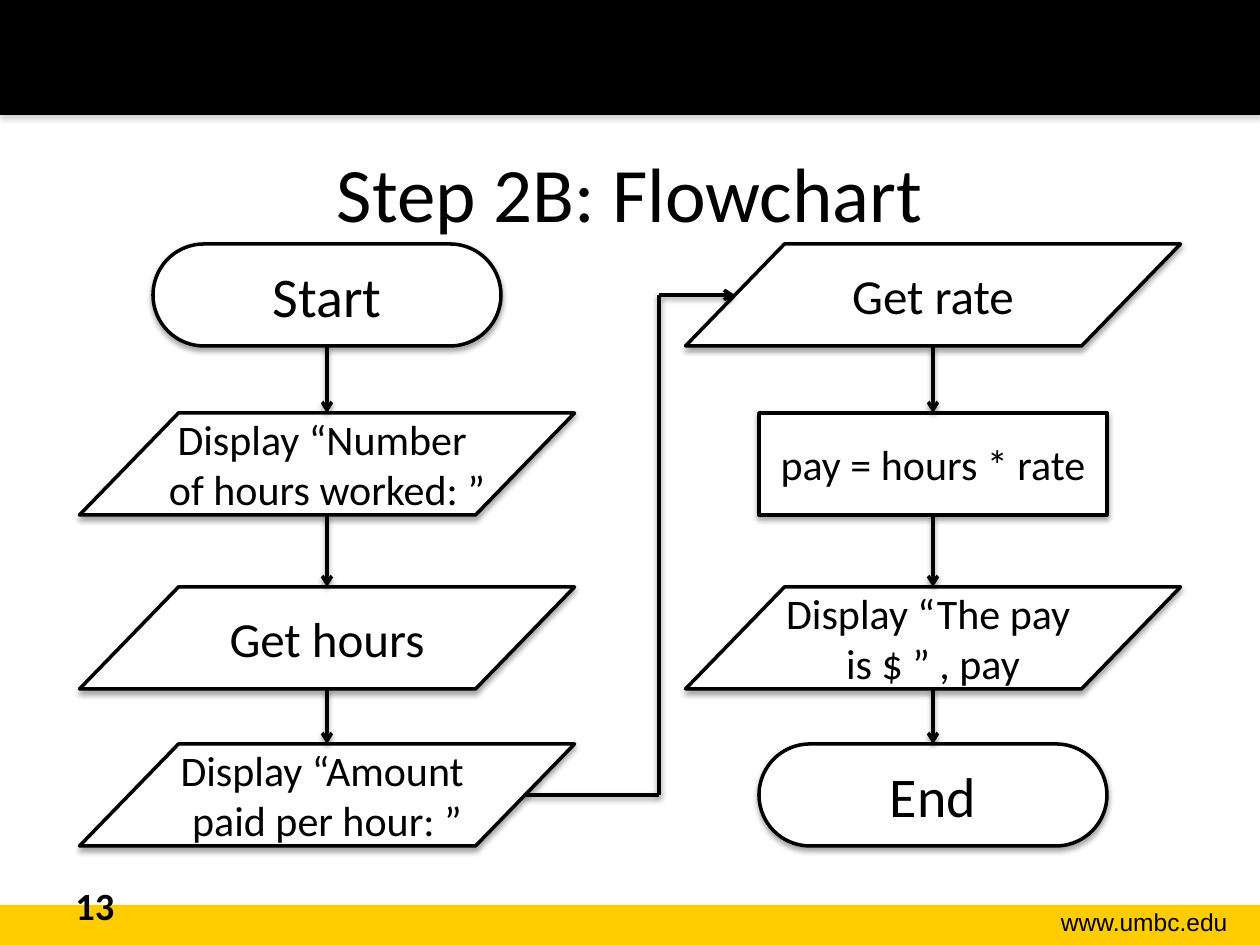
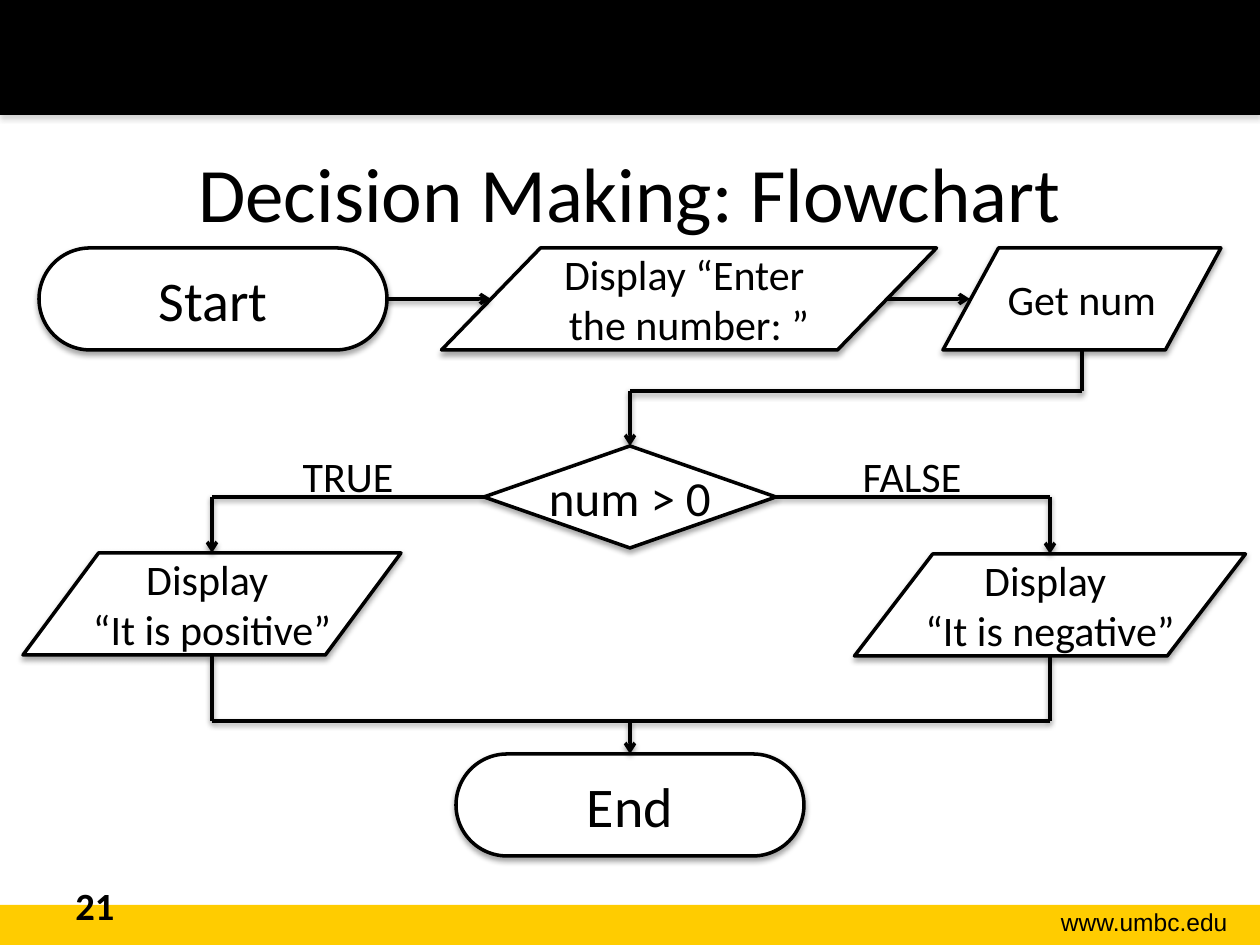
from typing import Any, NamedTuple

from lxml import etree
from pptx import Presentation
from pptx import util as u
from pptx.dml.color import RGBColor
from pptx.enum import shapes, text
from pptx.oxml import ns

BLACK = RGBColor(0x00, 0x00, 0x00)
GREY = RGBColor(0x80, 0x80, 0x80)
WHITE = RGBColor(0xFF, 0xFF, 0xFF)
GOLD = RGBColor(0xFF, 0xCC, 0x00)

PX_PER_INCH = 126
PAGE_WIDTH, PAGE_HEIGHT = 1260, 945
STEP_HEIGHT = 102
TERMINAL_WIDTH = 348
DATA_WIDTH = 495
LINE_WIDTH = u.Pt(2)

TERMINAL = shapes.MSO_SHAPE.ROUNDED_RECTANGLE
PROCESS = shapes.MSO_SHAPE.RECTANGLE
DATA = shapes.MSO_SHAPE.FLOWCHART_DATA
DECISION = shapes.MSO_SHAPE.FLOWCHART_DECISION

TOP, LEFT, BOTTOM, RIGHT = range(4)
ALIGN = text.PP_ALIGN


class Point(NamedTuple):
    """A place in px, with the shape and side to join when there is one."""
    x: int
    y: int
    shape: Any = None
    side: int = 0


class Step(NamedTuple):
    shape: Any
    kind: Any
    centre: int
    top: int
    width: int

    def port(self, side):
        """Middle of a side; the slanted sides of a data step lie further in."""
        middle = self.top + STEP_HEIGHT // 2
        inset = self.width // 10 if self.kind == DATA else 0
        reach = self.width // 2 - inset
        x, y = {
            TOP: (self.centre, self.top),
            LEFT: (self.centre - reach, middle),
            BOTTOM: (self.centre, self.top + STEP_HEIGHT),
            RIGHT: (self.centre + reach, middle),
        }[side]
        return Point(x, y, None if self.kind == DATA else self.shape, side)


def px(*lengths):
    return [u.Emu(round(length * u.Inches(1) / PX_PER_INCH)) for length in lengths]


def add_shadow(shape, color=BLACK, opacity=35, distance=23000):
    properties = shape.element.spPr
    effects = properties.find(ns.qn("a:effectLst"))
    if effects is None:
        effects = etree.SubElement(properties, ns.qn("a:effectLst"))
    shadow = etree.SubElement(
        effects, ns.qn("a:outerShdw"), blurRad="40000", dist=str(distance),
        dir="5400000", rotWithShape="0")
    tint = etree.SubElement(shadow, ns.qn("a:srgbClr"), val=str(color))
    etree.SubElement(tint, ns.qn("a:alpha"), val=str(opacity * 1000))


def write(shape, words, size, align=ALIGN.CENTER, name="Calibri", bold=False):
    para = shape.text_frame.paragraphs[0]
    para.text = words
    para.alignment = align
    formats = {"size": u.Pt(size), "name": name, "bold": bold}
    for span in para.runs:
        for key, value in formats.items():
            setattr(span.font, key, value)
        span.font.color.rgb = BLACK


def add_text(page, box, words, size, **formats):
    label = page.shapes.add_textbox(*px(*box))
    label.text_frame.word_wrap = True
    write(label, words, size, **formats)
    return label


def add_band(page, box, color):
    band = page.shapes.add_shape(PROCESS, *px(*box))
    band.shadow.inherit = False
    band.fill.solid()
    band.fill.fore_color.rgb = color
    band.line.fill.background()
    return band


def furnish_layout(layout, page):
    """Draw the bands and address on a page, then move them to its layout."""
    footer = add_band(page, (0, 905, PAGE_WIDTH, 40), GOLD)
    header = add_band(page, (0, 0, PAGE_WIDTH, 115), BLACK)
    add_shadow(header, GREY)
    address = add_text(page, (989, 901, 251, 43), "www.umbc.edu", 14,
                       align=ALIGN.RIGHT, name="Arial")
    for position, part in enumerate((footer, header, address)):
        part.element.nvSpPr.cNvPr.set("id", str(100 + position))
        layout.shapes.element.insert(2 + position, part.element)


def add_page(deck, layout, heading, number):
    page = deck.slides.add_slide(layout)
    title = page.shapes.title
    title.left, title.top, title.width, title.height = px(63, 113, 1134, 158)
    title.text_frame.vertical_anchor = text.MSO_ANCHOR.MIDDLE
    write(title, heading, 44)
    add_text(page, (63, 876, 294, 50), number, 22, align=ALIGN.LEFT, bold=True)
    return page


def add_step(page, kind, centre, top, width, words, size):
    box = px(centre - width / 2, top, width, STEP_HEIGHT)
    shape = page.shapes.add_shape(kind, *box)
    if kind == TERMINAL:
        shape.adjustments[0] = 0.5
    shape.shadow.inherit = False
    add_shadow(shape)
    shape.fill.solid()
    shape.fill.fore_color.rgb = WHITE
    shape.line.color.rgb = BLACK
    shape.line.width = LINE_WIDTH
    shape.text_frame.word_wrap = kind in (TERMINAL, PROCESS)
    shape.text_frame.vertical_anchor = text.MSO_ANCHOR.MIDDLE
    write(shape, words, size)
    return Step(shape, kind, centre, top, width)


def add_route(page, *points, arrow=True):
    """Join the points by straight lines, with an arrowhead on the last."""
    for start, finish in zip(points, points[1:]):
        line = page.shapes.add_connector(
            shapes.MSO_CONNECTOR.STRAIGHT, *px(*start[:2], *finish[:2]))
        if start.shape is not None:
            line.begin_connect(start.shape, start.side)
        if finish.shape is not None:
            line.end_connect(finish.shape, finish.side)
        line.line.color.rgb = BLACK
        line.line.width = LINE_WIDTH
        if arrow and finish is points[-1]:
            etree.SubElement(line.line._get_or_add_ln(), ns.qn("a:tailEnd"), type="arrow")
        add_shadow(line, opacity=38, distance=20000)


def add_column(page, centre, steps):
    """Stack steps on the four rows, each with an arrow to the next."""
    column = [add_step(page, kind, centre, top, width, words, size)
              for top, (kind, width, words, size) in zip((244, 413, 587, 744), steps)]
    for upper, lower in zip(column, column[1:]):
        add_route(page, upper.port(BOTTOM), lower.port(TOP))
    return column


def draw_pay_flow(page):
    asking = add_column(page, 327, [
        (TERMINAL, TERMINAL_WIDTH, "Start", 32),
        (DATA, DATA_WIDTH, "Display “Number \nof hours worked: ”", 24),
        (DATA, DATA_WIDTH, "Get hours", 28),
        (DATA, DATA_WIDTH, "Display “Amount \npaid per hour: ”", 24),
    ])
    paying = add_column(page, 933, [
        (DATA, DATA_WIDTH, "Get rate", 28),
        (PROCESS, TERMINAL_WIDTH, "pay = hours * rate", 24),
        (DATA, DATA_WIDTH, "Display “The pay \nis $ ” , pay", 24),
        (TERMINAL, TERMINAL_WIDTH, "End", 32),
    ])
    leave, enter = asking[-1].port(RIGHT), paying[0].port(LEFT)
    add_route(page, leave, Point(659, leave.y), Point(659, enter.y), enter)


def draw_decision_flow(page):
    middle, bend_y, merge_y = PAGE_WIDTH // 2, 391, 721
    start = add_step(page, TERMINAL, 213, 248, TERMINAL_WIDTH, "Start", 32)
    prompt = add_step(page, DATA, 689, 248, DATA_WIDTH,
                      "Display “Enter \nthe number: ”", 24)
    get_number = add_step(page, DATA, 1082, 248, 278, "Get num", 24)
    test = add_step(page, DECISION, middle, 446, 292, "num > 0", 28)
    positive = add_step(page, DATA, 212, 553, 378, "Display \n“It is positive”", 24)
    negative = add_step(page, DATA, 1050, 554, 391, "Display \n“It is negative”", 24)
    end = add_step(page, TERMINAL, middle, 754, TERMINAL_WIDTH, "End", 32)

    add_route(page, start.port(RIGHT), prompt.port(LEFT))
    add_route(page, prompt.port(RIGHT), get_number.port(LEFT))
    add_route(page, get_number.port(BOTTOM), Point(get_number.centre, bend_y),
              Point(middle, bend_y), test.port(TOP))
    for side, branch in ((LEFT, positive), (RIGHT, negative)):
        leave = test.port(side)
        add_route(page, leave, Point(branch.centre, leave.y), branch.port(TOP))
    add_route(page, positive.port(BOTTOM), Point(positive.centre, merge_y),
              Point(negative.centre, merge_y), negative.port(BOTTOM), arrow=False)
    add_route(page, Point(middle, merge_y), end.port(TOP))

    for left, words in ((247, "TRUE"), (811, "FALSE")):
        add_text(page, (left, 444, 202, 63), words, 24)


def main():
    deck = Presentation()
    deck.slide_width, deck.slide_height = px(PAGE_WIDTH, PAGE_HEIGHT)
    layout = deck.slide_layouts.get_by_name("Title Only")
    pay_page = add_page(deck, layout, "Step 2B: Flowchart", "13")
    furnish_layout(layout, pay_page)
    draw_pay_flow(pay_page)
    draw_decision_flow(add_page(deck, layout, "Decision Making: Flowchart", "21"))
    deck.save("out.pptx")


if __name__ == "__main__":
    main()
